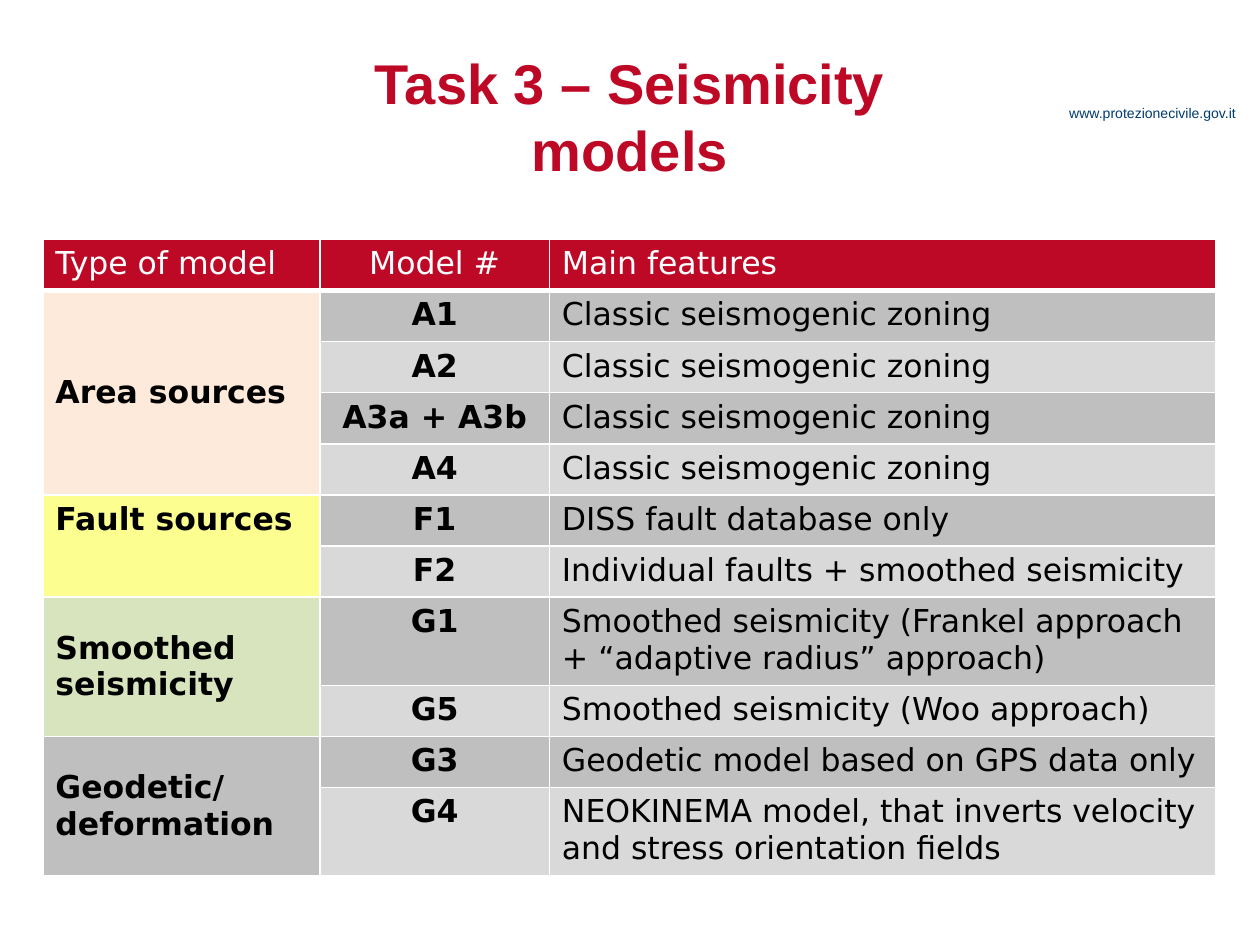
from dataclasses import dataclass

from lxml.etree import SubElement
from pptx import Presentation
from pptx.dml.color import RGBColor
from pptx.enum.text import MSO_ANCHOR, PP_ALIGN
from pptx.oxml.ns import qn
from pptx.util import Inches, Pt

RED = RGBColor(0xBD, 0x09, 0x26)
NAVY = RGBColor(0x00, 0x3A, 0x70)
BLACK = RGBColor(0x00, 0x00, 0x00)
WHITE = RGBColor(0xFF, 0xFF, 0xFF)
PEACH = RGBColor(0xFD, 0xEA, 0xDA)
YELLOW = RGBColor(0xFC, 0xFF, 0x8F)
GREEN = RGBColor(0xD7, 0xE4, 0xBD)
GREY = RGBColor(0xBF, 0xBF, 0xBF)
LIGHT_GREY = RGBColor(0xD9, 0xD9, 0xD9)

PAGE_WIDTH, PAGE_HEIGHT = 10, 7.5
TABLE_LEFT, TABLE_TOP, TABLE_HEIGHT = 0.34, 1.9, 5.05
COLUMN_WIDTHS = (2.2, 1.82, 5.29)
TALL_ROW = 0.7


@dataclass(frozen=True)
class TextStyle:
    font: str
    size: float
    color: RGBColor
    bold: bool = False
    align: PP_ALIGN = PP_ALIGN.LEFT


@dataclass(frozen=True)
class Model:
    code: str
    features: str
    tall: bool = False


@dataclass(frozen=True)
class ModelGroup:
    lines: tuple[str, ...]
    fill: RGBColor
    models: tuple[Model, ...]
    anchor: MSO_ANCHOR = MSO_ANCHOR.MIDDLE


TITLE = TextStyle("Arial", 32, RED, True, PP_ALIGN.CENTER)
ADDRESS = TextStyle("Arial", 8, NAVY, align=PP_ALIGN.RIGHT)
HEADER = TextStyle("DejaVu Sans", 18, WHITE)
HEADER_CENTERED = TextStyle("DejaVu Sans", 18, WHITE, align=PP_ALIGN.CENTER)
GROUP = TextStyle("DejaVu Sans", 18, BLACK, True)
CODE = TextStyle("DejaVu Sans", 18, BLACK, True, PP_ALIGN.CENTER)
FEATURES = TextStyle("DejaVu Sans", 18, BLACK)

ZONING = "Classic seismogenic zoning"
GROUPS = (
    ModelGroup(("Area sources",), PEACH, tuple(
        Model(code, ZONING) for code in ("A1", "A2", "A3a + A3b", "A4"))),
    ModelGroup(("Fault sources",), YELLOW, (
        Model("F1", "DISS fault database only"),
        Model("F2", "Individual faults + smoothed seismicity"),
    ), MSO_ANCHOR.TOP),
    ModelGroup(("Smoothed seismicity",), GREEN, (
        Model("G1", "Smoothed seismicity (Frankel approach "
                    "+ “adaptive radius” approach)", tall=True),
        Model("G5", "Smoothed seismicity (Woo approach)"),
    )),
    ModelGroup(("Geodetic/", "deformation"), GREY, (
        Model("G3", "Geodetic model based on GPS data only"),
        Model("G4", "NEOKINEMA model, that inverts velocity "
                    "and stress orientation fields", tall=True),
    )),
)


def write(frame, lines: tuple[str, ...], style: TextStyle) -> None:
    """Write each line as a paragraph with one run."""
    for index, line in enumerate(lines):
        para = frame.add_paragraph() if index else frame.paragraphs[0]
        para.alignment = style.align
        span = para.add_run()
        span.text = line
        span.font.name = style.font
        span.font.size = Pt(style.size)
        span.font.bold = style.bold
        span.font.color.rgb = style.color


def add_text(page, left: float, top: float, width: float, height: float,
             lines: tuple[str, ...], style: TextStyle) -> None:
    """Add a text box placed by shares of the page."""
    box = page.shapes.add_textbox(
        Inches(left * PAGE_WIDTH), Inches(top * PAGE_HEIGHT),
        Inches(width * PAGE_WIDTH), Inches(height * PAGE_HEIGHT))
    box.text_frame.word_wrap = True
    box.text_frame.vertical_anchor = MSO_ANCHOR.MIDDLE
    write(box.text_frame, lines, style)


def style_cell(cell, fill: RGBColor, bottom: float = 1) -> None:
    """Give a cell white borders and a solid fill."""
    properties = cell._tc.get_or_add_tcPr()
    for side, width in (("L", 1), ("R", 1), ("T", 1), ("B", bottom)):
        line = SubElement(properties, qn(f"a:ln{side}"), w=str(Pt(width)))
        solid = SubElement(line, qn("a:solidFill"))
        SubElement(solid, qn("a:srgbClr"), val=str(WHITE))
    cell.fill.solid()
    cell.fill.fore_color.rgb = fill


def add_model_table(page) -> None:
    models = [model for group in GROUPS for model in group.models]
    table = page.shapes.add_table(
        len(models) + 1, len(COLUMN_WIDTHS), Inches(TABLE_LEFT),
        Inches(TABLE_TOP), Inches(sum(COLUMN_WIDTHS)),
        Inches(TABLE_HEIGHT)).table
    table.first_row = table.horz_banding = False

    # Column widths; single-line rows share what the tall rows leave
    for column, width in zip(table.columns, COLUMN_WIDTHS):
        column.width = Inches(width)
    tall_count = sum(model.tall for model in models)
    row_height = ((TABLE_HEIGHT - tall_count * TALL_ROW)
                  / (len(models) + 1 - tall_count))
    table.rows[0].height = Inches(row_height)

    # Header row
    headings = (("Type of model", HEADER), ("Model #", HEADER_CENTERED),
                ("Main features", HEADER))
    for column, (heading, style) in enumerate(headings):
        cell = table.cell(0, column)
        style_cell(cell, RED, bottom=3)
        write(cell.text_frame, (heading,), style)

    # Model rows with alternating greys
    for row, model in enumerate(models, start=1):
        table.rows[row].height = Inches(TALL_ROW if model.tall else row_height)
        shade = GREY if row % 2 else LIGHT_GREY
        for column, text, style in ((1, model.code, CODE),
                                    (2, model.features, FEATURES)):
            cell = table.cell(row, column)
            style_cell(cell, shade)
            write(cell.text_frame, (text,), style)

    # Merged group cells in the first column
    first = 1
    for group in GROUPS:
        last = first + len(group.models) - 1
        for row in range(first, last + 1):
            style_cell(table.cell(row, 0), group.fill)
        cell = table.cell(first, 0)
        cell.merge(table.cell(last, 0))
        cell.vertical_anchor = group.anchor
        write(cell.text_frame, group.lines, GROUP)
        first = last + 1


def main() -> None:
    deck = Presentation()
    deck.slide_width = Inches(PAGE_WIDTH)
    deck.slide_height = Inches(PAGE_HEIGHT)
    page = deck.slides.add_slide(deck.slide_layouts[6])

    add_text(page, 0.82, 0.104, 0.171, 0.032,
             ("www.protezionecivile.gov.it",), ADDRESS)
    add_model_table(page)
    add_text(page, 0, 0.044, 1, 0.157,
             ("Task 3 – Seismicity", "models"), TITLE)
    deck.save("out.pptx")


if __name__ == "__main__":
    main()
